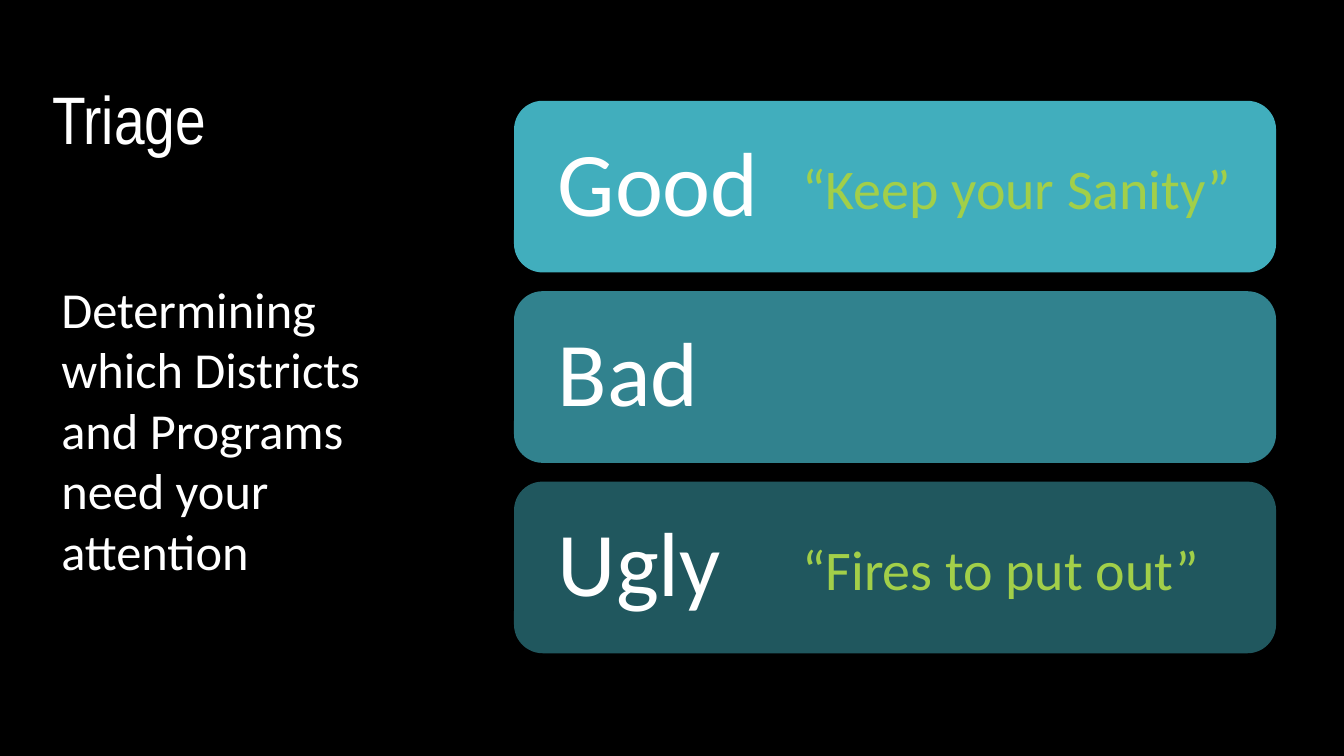
from pptx import Presentation
from pptx.dml.color import RGBColor
from pptx.enum.shapes import MSO_SHAPE as SHAPE
from pptx.enum.text import MSO_ANCHOR as ANCHOR, PP_ALIGN as ALIGN
from pptx.util import Pt

WHITE = "FFFFFF"
LIME = "A2CF49"
LEVELS = [
    ("Good", "41AEBD", "“Keep your Sanity”"),
    ("Bad", "31828E", None),
    ("Ugly", "20575E", "“Fires to put out”"),
]
BAR_LEFT, BAR_TOP, BAR_WIDTH, BAR_HEIGHT = 367.2, 72, 544.3, 122.6
BAR_STEP = 136


def rgb(color):
    return RGBColor.from_string(color)


def write(sp, text, size, color, font="Calibri", spacing=1.0):
    tf = sp.text_frame
    tf.word_wrap = True
    tf.text = text
    p = tf.paragraphs[0]
    p.alignment = ALIGN.LEFT
    p.line_spacing = spacing
    r = p.runs[0]
    r.font.name = font
    r.font.size = Pt(size)
    r.font.color.rgb = rgb(color)
    return tf


def add_title(slide, text):
    sp = slide.shapes.title
    sp.left, sp.top, sp.width, sp.height = Pt(30), Pt(55.4), Pt(231), Pt(64)
    tf = write(sp, text, 48, WHITE, "Arial Narrow", 0.9)
    tf.vertical_anchor = ANCHOR.MIDDLE


def add_text(slide, left, top, width, height, text, size, color):
    sp = slide.shapes.add_textbox(Pt(left), Pt(top), Pt(width), Pt(height))
    write(sp, text, size, color)


def add_bar(slide, top, label, fill):
    sp = slide.shapes.add_shape(
        SHAPE.ROUNDED_RECTANGLE,
        Pt(BAR_LEFT), Pt(top), Pt(BAR_WIDTH), Pt(BAR_HEIGHT))
    sp.shadow.inherit = False
    sp.fill.solid()
    sp.fill.fore_color.rgb = rgb(fill)
    sp.line.fill.background()
    tf = write(sp, label, 65, WHITE, spacing=0.9)
    tf.vertical_anchor = ANCHOR.MIDDLE
    tf.margin_left = tf.margin_right = Pt(25.2)


def main():
    prs = Presentation()
    prs.slide_width, prs.slide_height = Pt(960), Pt(540)
    slide = prs.slides.add_slide(prs.slide_layouts[5])
    background = slide.background.fill
    background.solid()
    background.fore_color.rgb = rgb("000000")

    add_title(slide, "Triage")
    for i, (label, fill, remark) in enumerate(LEVELS):
        top = BAR_TOP + i * BAR_STEP
        add_bar(slide, top, label, fill)
        if remark:
            add_text(slide, 566, top + 34.3, 345.6, 55.4, remark, 40, LIME)
    add_text(slide, 36.7, 195.1, 262.8, 225.4,
             "Determining which Districts and Programs need your attention",
             36, WHITE)
    prs.save("out.pptx")


if __name__ == "__main__":
    main()
